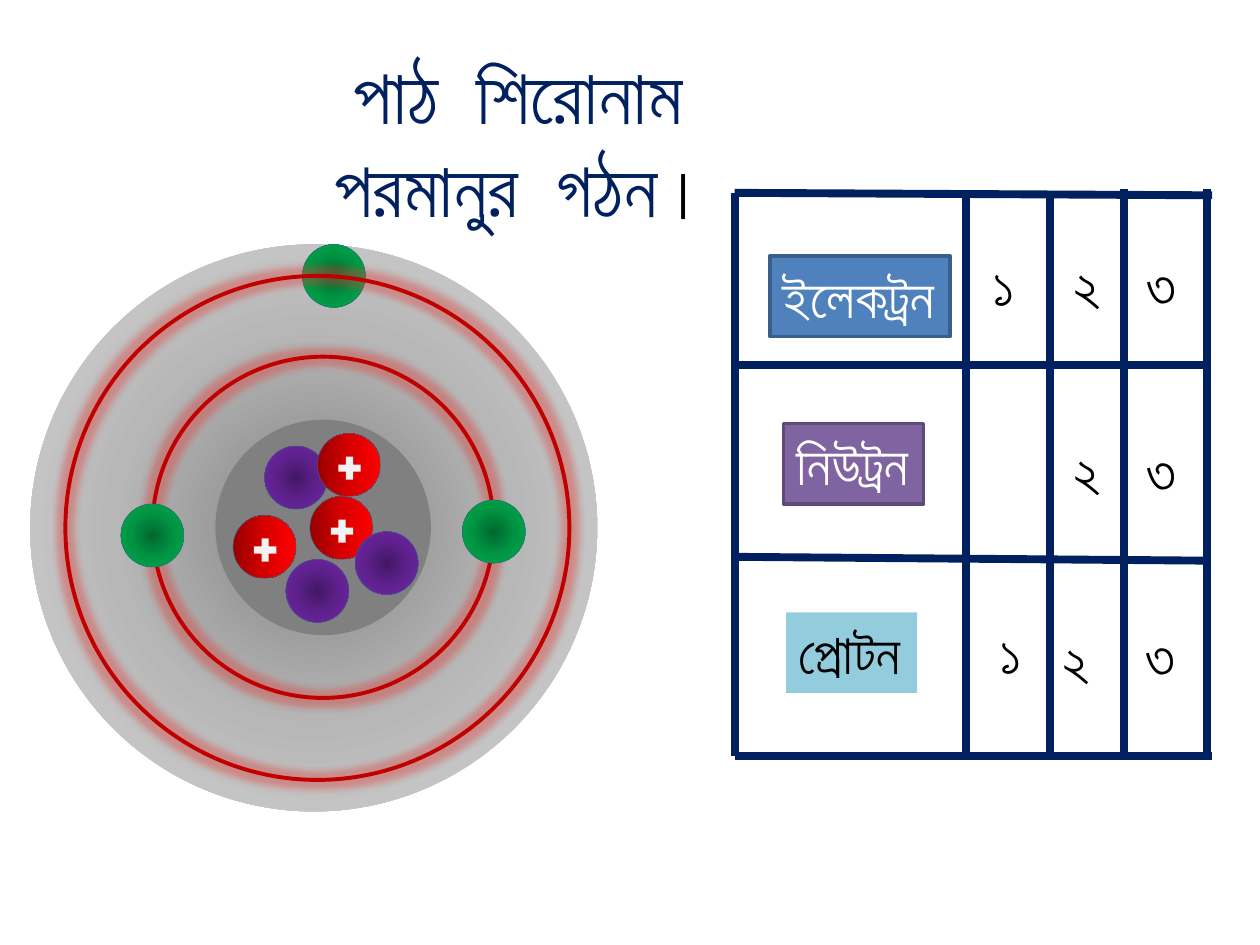
"""Build a lesson slide with an atom model and a particle count table."""
from lxml.etree import SubElement
from pptx import Presentation
from pptx.dml.color import RGBColor
from pptx.enum.shapes import MSO_CONNECTOR as Connector, MSO_SHAPE as Shape
from pptx.enum.text import MSO_AUTO_SIZE as AutoSize
from pptx.oxml.ns import qn
from pptx.util import Pt

NAVY, BLACK, WHITE, EDGE = "002060", "000000", "FFFFFF", "3A5F8C"
GREEN = ("00682F", "009443", "00B050")
RED = ("970000", "D70000", "FF0000")
PURPLE = ("431764", "5F218E", "7128A8")
GRAY = ("808080", "B7B7B7", "D9D9D9")
BALL = 36


def color(value):
    return RGBColor.from_string(value)


class AtomSlide:
    def __init__(self, page):
        self.page = page
        self.text_font, self.digit_font = "Roboto", "Calibri"
        self.text_size, self.title_size = 32, 44

    def shape(self, kind, left, top, width, height, fill=None, line=None, weight=0.25, parent=None):
        shapes = (parent or self.page).shapes
        shape = shapes.add_shape(kind, Pt(left), Pt(top), Pt(width), Pt(height))
        shape.shadow.inherit = False
        self.paint(shape, fill, line, weight)
        return shape

    def paint(self, shape, fill, line, weight):
        if fill:
            shape.fill.solid()
            shape.fill.fore_color.rgb = color(fill)
        else:
            shape.fill.background()
        if line:
            shape.line.color.rgb = color(line)
            shape.line.width = Pt(weight)
        else:
            shape.line.fill.background()

    def circle(self, left, top, size, **style):
        return self.shape(Shape.OVAL, left, top, size, size, **style)

    def sphere(self, left, top, size, stops, line=EDGE, radial=True, parent=None):
        ball = self.circle(left, top, size, line=line, parent=parent)
        ball.fill.gradient()
        gradient = ball._element.spPr.find(qn("a:gradFill"))
        for child in list(gradient):
            gradient.remove(child)
        stop_list = SubElement(gradient, qn("a:gsLst"))
        for index, value in enumerate(stops):
            stop = SubElement(stop_list, qn("a:gs"), pos=str(index * 50000))
            SubElement(stop, qn("a:srgbClr"), val=value)
        if radial:
            center = SubElement(gradient, qn("a:path"), {"path": "circle"})
            SubElement(center, qn("a:fillToRect"), dict.fromkeys("ltrb", "50000"))
        else:
            SubElement(gradient, qn("a:lin"), ang="0", scaled="0")

    def proton(self, left, top):
        group = self.page.shapes.add_group_shape()
        self.sphere(left, top, BALL, RED, radial=False, parent=group)
        self.shape(Shape.MATH_PLUS, left + 9.7, top + 10.8, 17.3, 18, fill="F2F2F2", parent=group)

    def orbit(self, left, top, size):
        ring = self.circle(left, top, size, line="C00000", weight=2.25)
        effects = ring._element.spPr.find(qn("a:effectLst"))
        glow = SubElement(effects, qn("a:glow"), rad=str(Pt(8)))
        tint = SubElement(glow, qn("a:srgbClr"), val="DE3A35")
        SubElement(tint, qn("a:alpha"), val="40000")

    def rule(self, x1, y1, x2, y2):
        line = self.page.shapes.add_connector(Connector.STRAIGHT, Pt(x1), Pt(y1), Pt(x2), Pt(y2))
        line.line.color.rgb = color(NAVY)
        line.line.width = Pt(4.5)
        SubElement(line._element.spPr, qn("a:effectLst"))

    def style(self, span, font, size, ink):
        span.font.name = font
        span.font.size = Pt(size)
        span.font.color.rgb = color(ink)
        SubElement(span.font._element, qn("a:cs"), typeface=font)

    def label(self, text, left, top, width, font, ink=BLACK, fill=None, line=None):
        box = self.page.shapes.add_textbox(Pt(left), Pt(top), Pt(width), Pt(46.1))
        self.paint(box, fill, line, 2)
        frame = box.text_frame
        frame.word_wrap = False
        frame.auto_size = AutoSize.SHAPE_TO_FIT_TEXT
        frame.text = text
        self.style(frame.paragraphs[0].runs[0], font, self.text_size, ink)

    def title(self, lines, left, top, width, height):
        box = self.page.shapes.add_textbox(Pt(left), Pt(top), Pt(width), Pt(height))
        frame = box.text_frame
        frame.word_wrap = True
        frame.text = "\n".join("" for _ in lines)
        for para, (indent, spans) in zip(frame.paragraphs, lines):
            para._p.get_or_add_pPr().set("marL", str(Pt(indent)))
            for text, ink in spans:
                span = para.add_run()
                span.text = text
                self.style(span, self.text_font, self.title_size, ink)


def draw_atom(slide):
    slide.sphere(17.3, 139.7, 324, GRAY, line=None)
    slide.orbit(87.1, 203.8, 195)
    slide.sphere(69.1, 288, BALL, GREEN)
    slide.sphere(172.8, 139.7, BALL, GREEN)
    slide.orbit(37.4, 157.7, 288)
    slide.sphere(264.2, 285.8, BALL, GREEN)
    slide.circle(123.1, 239.8, 123.1, fill="808080")
    slide.proton(177.1, 283.7)
    slide.proton(133.2, 294.5)
    slide.sphere(151.2, 254.9, BALL, PURPLE)
    slide.sphere(163.4, 319.7, BALL, PURPLE)
    slide.proton(181.4, 247.7)
    slide.sphere(203, 303.8, BALL, PURPLE)


def draw_table(slide):
    for x, top in ((419.8, 110.2), (552.2, 110.2), (599.8, 110.2), (642.2, 108), (689.8, 108)):
        slide.rule(x, top, x, top + 322)
    for y1, y2, right in ((110.2, 111.6, 692.6), (208.8, 208.8, 689.8),
                          (318.2, 320.4, 689.8), (432, 432, 692.6)):
        slide.rule(419.8, y1, right, y2)

    names = (("ইলেকট্রন", 439.9, 146.2, 103, WHITE, "4F81BD", EDGE),
             ("নিউট্রন", 447.8, 241.9, 79.9, WHITE, "8064A2", "5F4A78"),
             ("প্রোটন", 449.3, 349.9, 74.9, BLACK, "93CDDD", None))
    for text, left, top, width, ink, fill, line in names:
        slide.label(text, left, top, width, slide.text_font, ink, fill, line)

    digits = (("১", 33.8, ((560.2, 139.7), (563.8, 349.9))),
              ("২", 35.3, ((606.2, 139.7), (606.2, 246.2), (599.8, 354.2))),
              ("৩", 37.4, ((648, 139.7), (648, 246.2), (647.3, 351.4))))
    for digit, width, places in digits:
        for left, top in places:
            slide.label(digit, left, top, width, slide.digit_font)


def main():
    deck = Presentation()
    deck.slide_width, deck.slide_height = Pt(720), Pt(540)
    slide = AtomSlide(deck.slides.add_slide(deck.slide_layouts[6]))
    draw_atom(slide)
    draw_table(slide)
    slide.title([(165, [("পাঠ  শিরোনাম", NAVY)]),
                 (154, [("পরমানুর  গঠন", NAVY), ("।", BLACK)])], 30.2, 23.8, 671.8, 167)
    deck.save("out.pptx")


if __name__ == "__main__":
    main()
